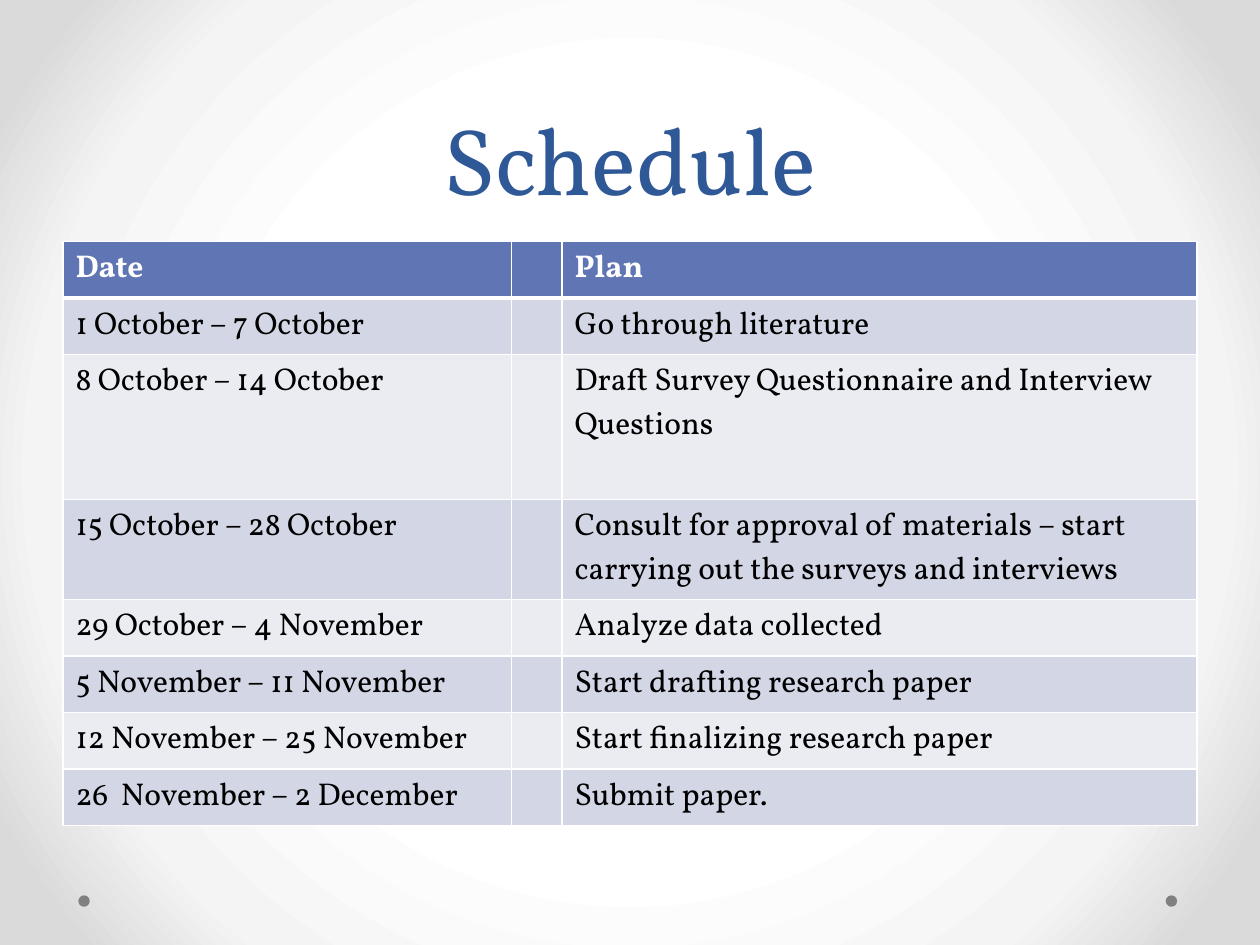
"""Build the research schedule slide: a title above a table of dates and plans."""
from lxml.etree import SubElement
from pptx import Presentation
from pptx.dml.color import RGBColor as Rgb
from pptx.enum.shapes import MSO_SHAPE as Shape
from pptx.enum.text import MSO_ANCHOR as Anchor, PP_ALIGN as Align
from pptx.oxml import parse_xml
from pptx.oxml.ns import nsdecls, qn
from pptx.util import Cm, Pt

TITLE = "Schedule"
HEADINGS = ("Date", "", "Plan")
STAGES = [
    ("1 October – 7 October", "Go through literature"),
    ("8 October – 14 October", "Draft Survey Questionnaire and Interview Questions"),
    ("15 October – 28 October",
     "Consult for approval of materials – start carrying out the surveys and interviews"),
    ("29 October – 4 November", "Analyze data collected"),
    ("5 November – 11 November", "Start drafting research paper"),
    ("12 November – 25 November", "Start finalizing research paper"),
    ("26  November – 2 December", "Submit paper."),
]
COLOURS = {
    "title": "2F5897", "header": "6076B4", "odd": "D2D6E5", "even": "EAECF2",
    "text": "000000", "white": "FFFFFF", "dot": "808080",
}
BACKDROP = [(50, "FFFFFF"), (76, "F4F4F4"), (92, "DADADA")]
FONT = "Vollkorn"
TITLE_FORMAT = {"name": FONT, "size": Pt(54)}
HEADER_FORMAT = {"name": FONT, "size": Pt(18), "bold": True}
BODY_FORMAT = {"name": FONT, "size": Pt(18), "bold": False}

WIDTH, HEIGHT, MARGIN = 25.4, 19.05, 1.27
COLUMNS = (9.04, 1.02, 12.8)
ROW, TALL_ROWS = 1.14, {2: 2.92, 3: 2.02}
TABLE_TOP, TITLE_HEIGHT = 4.87, 4.45
DOT, DOT_TOP, DOT_LEFTS = 0.23, 18.05, (1.58, 23.5)


def style(run, formats, colour):
    for attribute, value in formats.items():
        setattr(run.font, attribute, value)
    run.font.color.rgb = Rgb.from_string(COLOURS[colour])


def paint_backdrop(slide):
    stops = "".join(
        f'<a:gs pos="{place * 1000}"><a:srgbClr val="{colour}"/></a:gs>'
        for place, colour in BACKDROP)
    slide.element.cSld.insert(0, parse_xml(
        f'<p:bg {nsdecls("p", "a")}><p:bgPr><a:gradFill rotWithShape="1">'
        f'<a:gsLst>{stops}</a:gsLst><a:path path="circle">'
        '<a:fillToRect l="50000" t="50000" r="50000" b="50000"/></a:path>'
        '</a:gradFill><a:effectLst/></p:bgPr></p:bg>'))


def add_dots(slide):
    for left in DOT_LEFTS:
        dot = slide.shapes.add_shape(Shape.OVAL, Cm(left), Cm(DOT_TOP), Cm(DOT), Cm(DOT))
        dot.shadow.inherit = False
        dot.fill.solid()
        dot.fill.fore_color.rgb = Rgb.from_string(COLOURS["dot"])
        dot.line.fill.background()


def add_title(slide):
    box = slide.shapes.add_textbox(
        Cm(MARGIN), Cm(0), Cm(WIDTH - 2 * MARGIN), Cm(TITLE_HEIGHT))
    frame = box.text_frame
    frame.word_wrap = True
    frame.vertical_anchor = Anchor.BOTTOM
    heading = frame.paragraphs[0]
    heading.alignment = Align.CENTER
    heading.line_spacing = Pt(58)
    run = heading.add_run()
    run.text = TITLE
    style(run, TITLE_FORMAT, "title")


def add_borders(cell, row):
    widths = {"L": 1, "R": 1, "T": 3 if row == 1 else 1, "B": 3 if row == 0 else 1}
    properties = cell._tc.get_or_add_tcPr()
    for side, width in widths.items():
        line = SubElement(properties, qn(f"a:ln{side}"), w=str(Pt(width)))
        fill = SubElement(line, qn("a:solidFill"))
        SubElement(fill, qn("a:srgbClr"), val=COLOURS["white"])


def add_schedule(slide):
    rows = [HEADINGS] + [(date, "", plan) for date, plan in STAGES]
    heights = [TALL_ROWS.get(row, ROW) for row in range(len(rows))]
    table = slide.shapes.add_table(
        len(rows), len(COLUMNS), Cm(MARGIN), Cm(TABLE_TOP),
        Cm(sum(COLUMNS)), Cm(sum(heights))).table
    for column, width in zip(table.columns, COLUMNS):
        column.width = Cm(width)
    for row, (texts, height) in enumerate(zip(rows, heights)):
        table.rows[row].height = Cm(height)
        band = "header" if row == 0 else "odd" if row % 2 else "even"
        formats, ink = (BODY_FORMAT, "text") if row else (HEADER_FORMAT, "white")
        for column, text in enumerate(texts):
            cell = table.cell(row, column)
            add_borders(cell, row)
            cell.fill.solid()
            cell.fill.fore_color.rgb = Rgb.from_string(COLOURS[band])
            if text:
                run = cell.text_frame.paragraphs[0].add_run()
                run.text = text
                style(run, formats, ink)


def main():
    deck = Presentation()
    deck.slide_width, deck.slide_height = Cm(WIDTH), Cm(HEIGHT)
    slide = deck.slides.add_slide(deck.slide_layouts[6])
    paint_backdrop(slide)
    add_dots(slide)
    add_title(slide)
    add_schedule(slide)
    deck.save("out.pptx")


if __name__ == "__main__":
    main()
